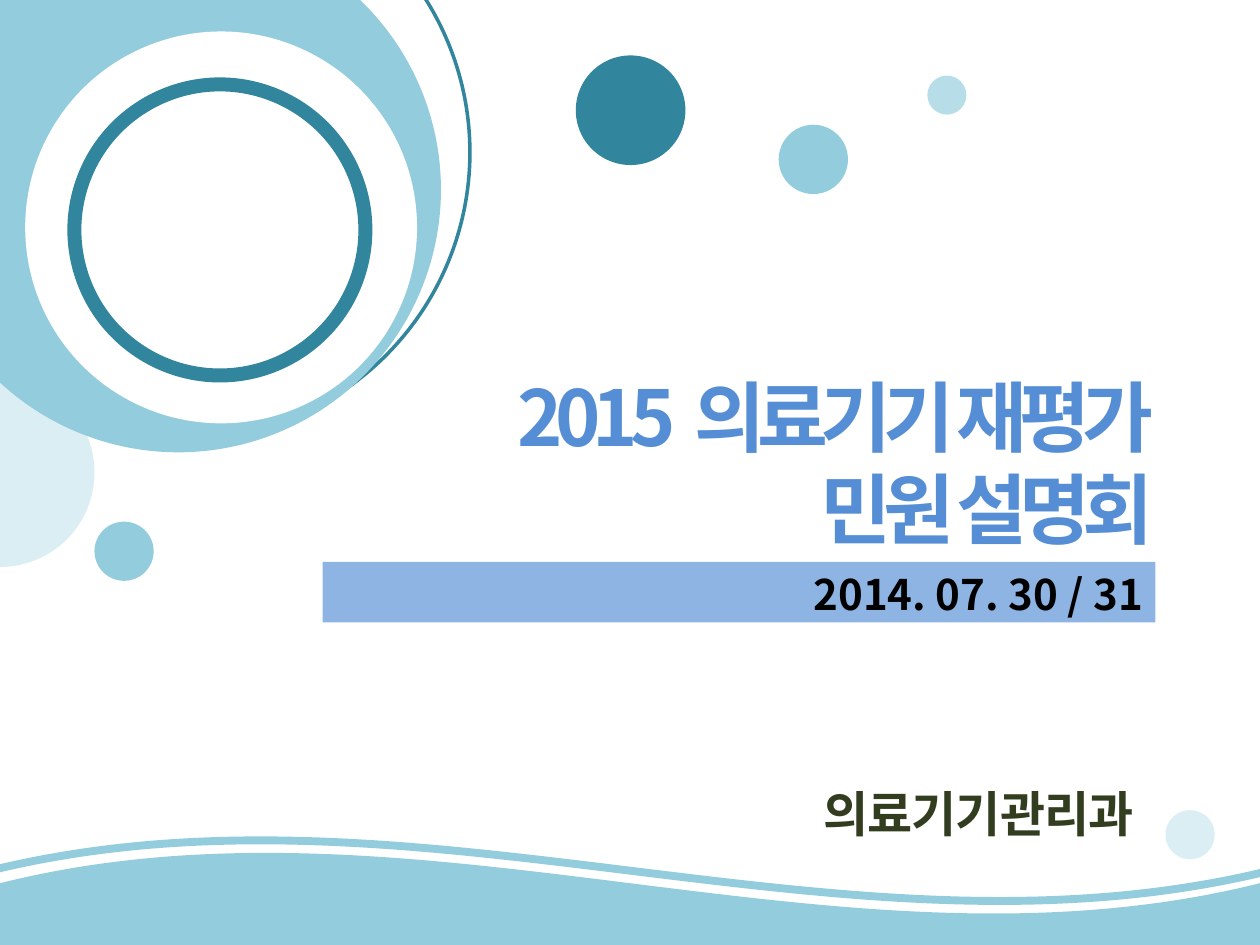
import pptx
import pptx.util
import pptx.dml.color
import pptx.enum.shapes
import pptx.enum.text
import pptx.oxml.ns
import lxml.etree

EMU_PER_PX = 9144
FONT = "Noto Sans CJK KR"
TEAL, AQUA, PALE_AQUA, MIST, WHITE = "31859C", "93CDDD", "B7DEE8", "DBEEF4", "FFFFFF"
PRESET = pptx.enum.shapes.MSO_SHAPE
ALIGN = pptx.enum.text.PP_ALIGN


def px(length):
    return pptx.util.Emu(length * EMU_PER_PX)


def color(hex_value):
    return pptx.dml.color.RGBColor.from_string(hex_value)


def add_figure(shapes, preset, box, fill=None, outline=None, rotation=0):
    figure = shapes.add_shape(preset, *map(px, box))
    figure.shadow.inherit = False
    figure.rotation = rotation
    if fill:
        figure.fill.solid()
        figure.fill.fore_color.rgb = color(fill)
    else:
        figure.fill.background()
    if outline:
        line_color, width = outline
        figure.line.color.rgb = color(line_color)
        figure.line.width = pptx.util.Pt(width)
    else:
        figure.line.fill.background()


def add_circle(shapes, left, top, diameter, fill, outline=None):
    add_figure(shapes, PRESET.OVAL, (left, top, diameter, diameter), fill, outline)


def add_run(paragraph, text, size, ink, spacing, opacity):
    run = paragraph.add_run()
    run.text = text
    font_format = {"name": FONT, "size": pptx.util.Pt(size), "bold": True}
    for attribute, value in font_format.items():
        setattr(run.font, attribute, value)
    run.font.color.rgb = color(ink)
    properties = run.font._element
    if spacing:
        properties.set("spc", str(round(spacing * 100)))
    if opacity < 100:
        ink_element = properties.find(".//" + pptx.oxml.ns.qn("a:srgbClr"))
        alpha = lxml.etree.SubElement(ink_element, pptx.oxml.ns.qn("a:alpha"))
        alpha.set("val", str(opacity * 1000))
    east_asian = lxml.etree.Element(pptx.oxml.ns.qn("a:ea"), typeface=FONT)
    properties.find(pptx.oxml.ns.qn("a:latin")).addnext(east_asian)


def add_label(shapes, box, lines, size, ink, align=ALIGN.RIGHT, wrap=False,
              spacing=0, opacity=100):
    frame = shapes.add_textbox(*map(px, box)).text_frame
    frame_format = {
        "word_wrap": wrap,
        "auto_size": pptx.enum.text.MSO_AUTO_SIZE.SHAPE_TO_FIT_TEXT,
    }
    for attribute, value in frame_format.items():
        setattr(frame, attribute, value)
    for index, line in enumerate(lines):
        paragraph = frame.add_paragraph() if index else frame.paragraphs[0]
        paragraph.alignment = align
        for text, run_spacing in line:
            add_run(paragraph, text, size, ink,
                    spacing if run_spacing is None else run_spacing, opacity)


def add_rings(slide):
    rings = slide.shapes.add_group_shape().shapes
    add_circle(rings, -83, -107, 456, WHITE, (TEAL, 2))
    add_circle(rings, -67, -58, 417, AQUA)
    add_circle(rings, 20, 25, 311, WHITE)
    add_circle(rings, 59, 67, 231, WHITE, (TEAL, 8))


def add_bubbles(slide):
    bubbles = [
        (457, 44, 87, TEAL),
        (618, 99, 55, AQUA),
        (736, 60, 31, PALE_AQUA),
        (925, 643, 39, MIST),
        (75, 414, 47, AQUA),
    ]
    for left, top, diameter, fill in bubbles:
        add_circle(slide.shapes, left, top, diameter, fill)


def add_waves(slide):
    add_figure(slide.shapes, PRESET.WAVE, (-8, 666, 1016, 200),
               outline=(AQUA, 4.5), rotation=180)
    add_figure(slide.shapes, PRESET.WAVE, (0, 676, 1000, 200), AQUA)


def add_date_bar(slide):
    date_bar = slide.shapes.add_group_shape().shapes
    add_figure(date_bar, PRESET.RECTANGLE, (256, 446, 661, 48), "8EB4E3")
    add_label(date_bar, (256, 446, 661, 50), [[("2014. 07. 30 / 31", None)]],
              24, "000000", wrap=True)


def main():
    presentation = pptx.Presentation()
    presentation.slide_width, presentation.slide_height = px(1000), px(750)
    slide = presentation.slides.add_slide(presentation.slide_layouts[6])
    add_circle(slide.shapes, -75, 300, 150, MIST)
    add_rings(slide)
    add_bubbles(slide)
    add_label(slide.shapes, (634, 617, 285, 57), [[("의료기기관리과", None)]],
              28, "283214", align=ALIGN.CENTER, spacing=-0.5, opacity=94)
    add_waves(slide)
    title = [
        [("2015", None), (" ", 0.7), ("의료기기 재평가", None)],
        [("민원 설명회", None)],
    ]
    add_label(slide.shapes, (379, 288, 546, 158), title, 44, "558ED5", spacing=-4.5)
    add_date_bar(slide)
    presentation.save("out.pptx")


if __name__ == "__main__":
    main()
